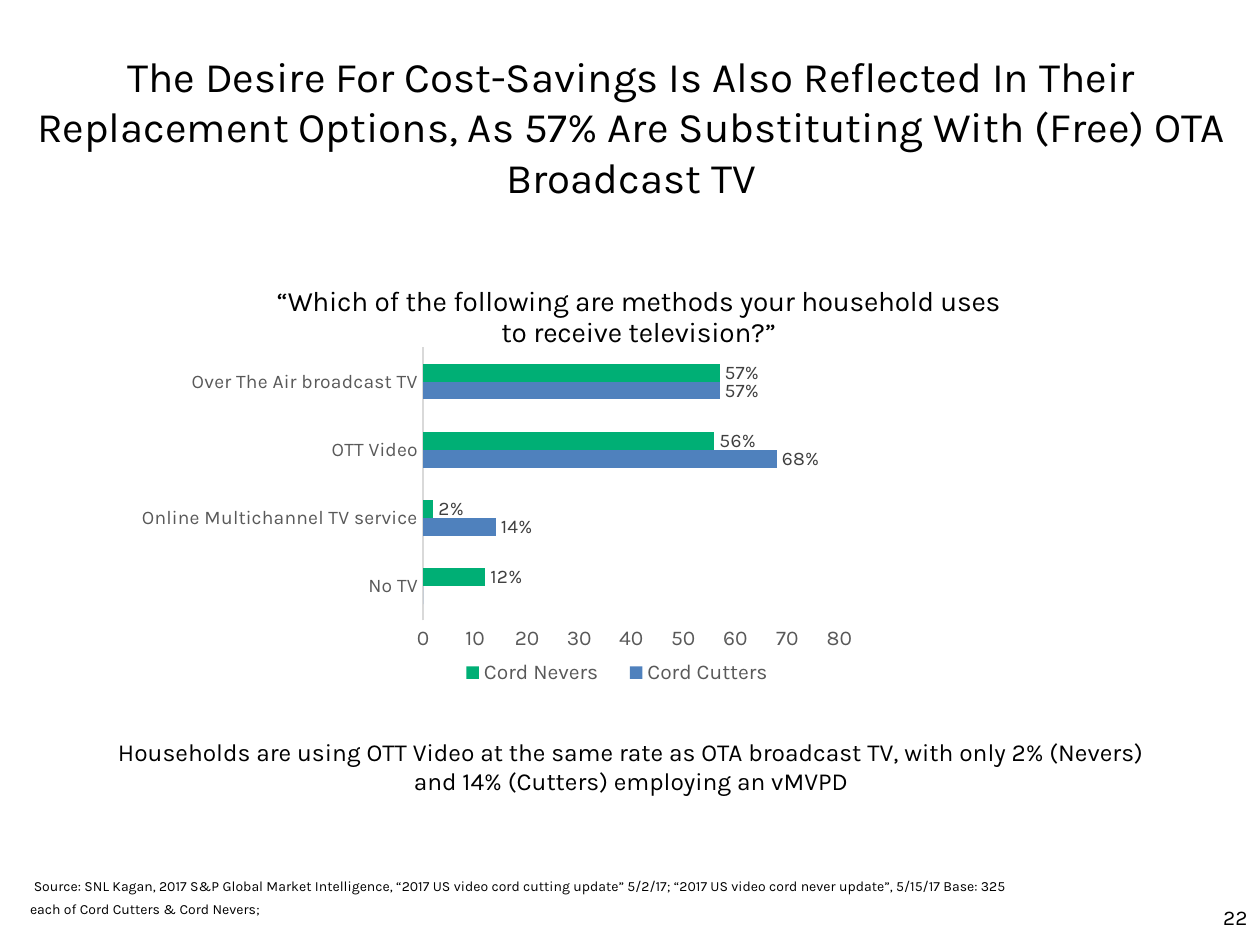
from dataclasses import dataclass
from typing import NamedTuple

from lxml.etree import SubElement
from pptx import Presentation
from pptx.chart.data import CategoryChartData
from pptx.dml.color import RGBColor
from pptx.enum.chart import XL_CHART_TYPE, XL_LABEL_POSITION, XL_LEGEND_POSITION, XL_TICK_MARK
from pptx.enum.text import MSO_ANCHOR, PP_ALIGN
from pptx.oxml.ns import qn
from pptx.util import Inches, Pt


@dataclass(frozen=True)
class Theme:
    font: str = "Karla"
    ink: str = "000000"
    axis: str = "595959"
    label: str = "404040"
    rule: str = "D9D9D9"
    title: int = 24
    question: int = 16
    body: int = 14
    small: int = 12
    data: int = 11
    source: int = 8


class Box(NamedTuple):
    left: float
    top: float
    width: float
    height: float


class Series(NamedTuple):
    name: str
    values: tuple
    color: str


T = Theme()
CATEGORIES = ("No TV", "Online Multichannel TV service", "OTT Video", "Over The Air broadcast TV")
SERIES = (
    Series("Cord Cutters", (0, 14, 68, 57), "4F81BD"),
    Series("Cord Nevers", (12, 2, 56, 57), "00AF75"),
)


def style(font, size: float, color: str) -> None:
    font.name, font.size, font.bold = T.font, Pt(size), False
    font.color.rgb = RGBColor.from_string(color)


def add_text(s, box: Box, text: str, *, size: float, align=PP_ALIGN.LEFT,
             anchor=MSO_ANCHOR.TOP, spacing=None, indent: float = 0, wrap: bool = True):
    tf = s.shapes.add_textbox(*map(Inches, box)).text_frame
    tf.word_wrap, tf.vertical_anchor = wrap, anchor
    p = tf.paragraphs[0]
    p.alignment = align
    if spacing:
        p.line_spacing = Pt(spacing)
    if indent:
        p._p.get_or_add_pPr().set("indent", str(Inches(indent)))
    r = p.add_run()
    r.text = text
    style(r.font, size, T.ink)


def set_layout(element, inner: bool = False, **fractions: float) -> None:
    """Place a chart part by fractions of the chart area."""
    layout = element.find(qn("c:layout"))
    if layout is None:
        layout = SubElement(element, qn("c:layout"))
        before = {qn("c:legendPos"), qn("c:tx"), qn("c:layout")}
        index = sum(child.tag in before for child in element) - 1
        element.insert(index, layout)
    for child in list(layout):
        layout.remove(child)
    manual = SubElement(layout, qn("c:manualLayout"))
    if inner:
        SubElement(manual, qn("c:layoutTarget")).set("val", "inner")
    for mode in ("xMode", "yMode"):
        SubElement(manual, qn(f"c:{mode}")).set("val", "edge")
    for key, value in fractions.items():
        SubElement(manual, qn(f"c:{key}")).set("val", str(value))


def add_methods_chart(s, box: Box) -> None:
    data = CategoryChartData()
    data.categories = CATEGORIES
    for item in SERIES:
        data.add_series(item.name, item.values)
    chart = s.shapes.add_chart(XL_CHART_TYPE.BAR_CLUSTERED, *map(Inches, box), data).chart
    style(chart.font, 10, T.ink)

    # Question as chart title
    chart.has_title = True
    title = chart.chart_title
    title.include_in_layout = False
    r = title.text_frame.paragraphs[0].add_run()
    r.text = "“Which of the following are methods your household uses to receive television?”"
    style(r.font, T.question, T.ink)
    set_layout(title._element, x=0.15, y=0.04)

    # Bars and labels; a zero gets no label
    plot = chart.plots[0]
    plot.gap_width, plot.overlap, plot.vary_by_categories = 182, 0, False
    for series, item in zip(plot.series, SERIES):
        series.format.fill.solid()
        series.format.fill.fore_color.rgb = RGBColor.from_string(item.color)
        labels = series.data_labels
        labels.show_value = True
        labels.number_format, labels.number_format_is_linked = '0"%";;', False
        labels.position = XL_LABEL_POSITION.OUTSIDE_END
        style(labels.font, T.data, T.label)
    set_layout(chart._chartSpace.chart.plotArea, inner=True, x=0.31, y=0.2, w=0.44, h=0.63)

    # Axes
    cat, val = chart.category_axis, chart.value_axis
    for axis, size in ((cat, T.data), (val, T.small)):
        axis.major_tick_mark = axis.minor_tick_mark = XL_TICK_MARK.NONE
        axis.has_major_gridlines = False
        style(axis.tick_labels.font, size, T.axis)
    cat.format.line.color.rgb = RGBColor.from_string(T.rule)
    cat.format.line.width = Pt(0.75)
    val.format.line.fill.background()
    val.minimum_scale, val.maximum_scale, val.major_unit = 0, 80, 10

    # Legend
    chart.has_legend = True
    legend = chart.legend
    legend.position, legend.include_in_layout = XL_LEGEND_POSITION.BOTTOM, False
    style(legend.font, T.small, T.axis)
    set_layout(legend._element, x=0.33, y=0.91, w=0.37, h=0.08)


def main() -> None:
    prs = Presentation()
    prs.slide_width, prs.slide_height = Inches(10), Inches(7.5)
    s = prs.slides.add_slide(prs.slide_layouts[6])

    # Headline
    add_text(s, Box(0.14, 0.35, 9.74, 1.45),
             "The Desire For Cost-Savings Is Also Reflected In Their Replacement Options, "
             "As 57% Are Substituting With (Free) OTA Broadcast TV",
             size=T.title, align=PP_ALIGN.CENTER)

    add_methods_chart(s, Box(1.03, 2.07, 7.51, 3.44))

    # Takeaway
    add_text(s, Box(0.67, 5.8, 8.68, 0.64),
             "Households are using OTT Video at the same rate as OTA broadcast TV, "
             "with only 2% (Nevers) and 14% (Cutters) employing an vMVPD",
             size=T.body, align=PP_ALIGN.CENTER)

    # Source and page number
    add_text(s, Box(0.14, 6.86, 7.96, 0.47),
             "Source: SNL Kagan, 2017 S&P Global Market Intelligence, “2017 US video cord "
             "cutting update” 5/2/17; “2017 US video cord never update”, 5/15/17 Base: 325 "
             "each of Cord Cutters & Cord Nevers;",
             size=T.source, anchor=MSO_ANCHOR.BOTTOM, spacing=13, indent=0.03)
    add_text(s, Box(9.61, 7.13, 0.39, 0.37), "22", size=T.small, wrap=False)

    prs.save("out.pptx")


if __name__ == "__main__":
    main()
